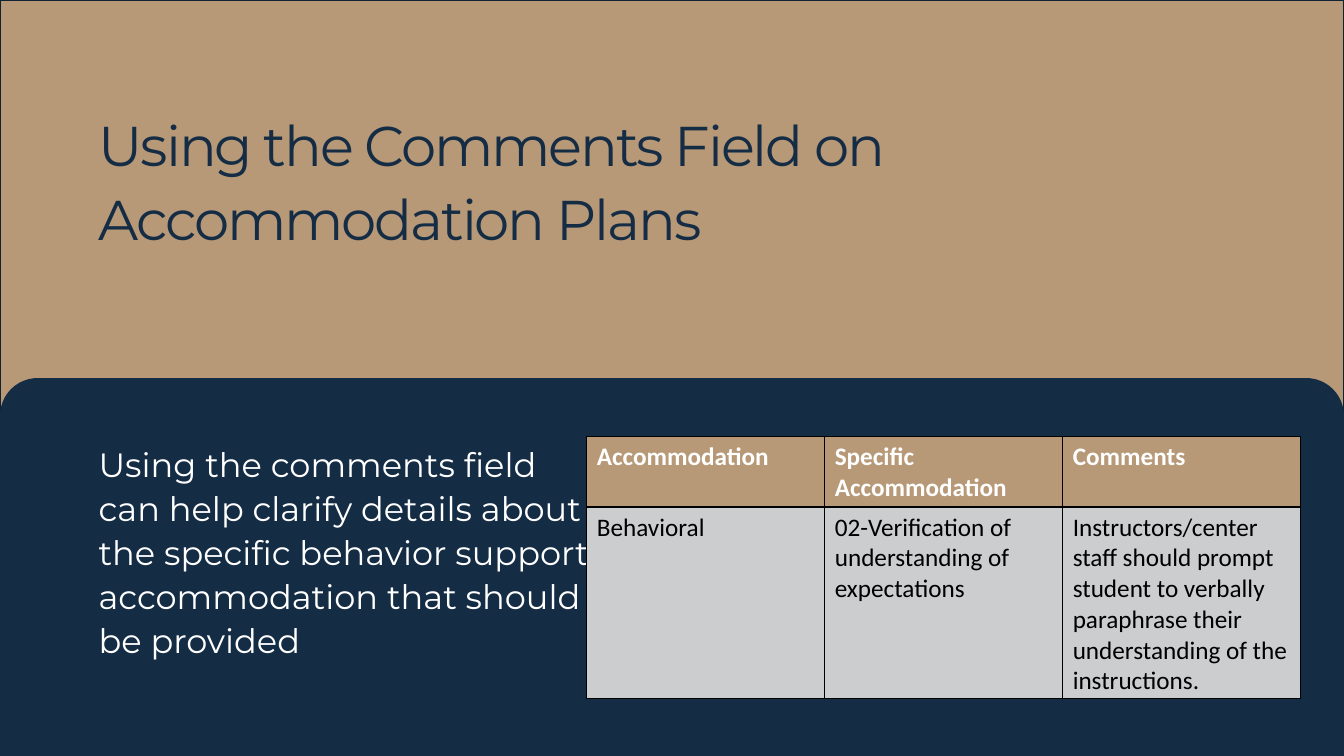
import dataclasses

import pptx
import pptx.dml.color
import pptx.enum.shapes
import pptx.enum.text
import pptx.oxml.ns
import pptx.oxml.xmlchemy
import pptx.util
from lxml import etree

Inches = pptx.util.Inches
Shape = pptx.enum.shapes.MSO_SHAPE

COLORS = {
    "tan": "B79977",
    "navy": "152C45",
    "outline": "102133",
    "gray": "CCCDCF",
    "white": "FFFFFF",
    "black": "000000",
}


@dataclasses.dataclass(frozen=True)
class Panel:
    shape: int
    top: float
    height: float
    fill: str
    line: str | None = None
    corners: tuple[float, ...] = ()


@dataclasses.dataclass(frozen=True)
class TextBlock:
    text: str
    top: float
    width: float
    height: float
    size: int
    color: str
    tracking: float = 0


@dataclasses.dataclass(frozen=True)
class TableRow:
    cells: tuple[str, ...]
    height: float
    fill: str
    color: str
    bold: bool


SLIDE_WIDTH, SLIDE_HEIGHT = 13.33, 7.5
TEXT_LEFT = 0.88
TABLE_LEFT, TABLE_TOP, COLUMN_WIDTH = 5.82, 4.33, 2.36

PANELS = [
    Panel(Shape.RECTANGLE, 0, 4.32, "tan", line="outline"),
    Panel(Shape.ROUND_2_SAME_RECTANGLE, 3.75, 3.75, "navy", corners=(0.1, 0)),
]
TEXT_BLOCKS = [
    TextBlock("Using the Comments Field on Accommodation Plans",
              0.99, 11.51, 1.52, 40, "navy", tracking=-1.5),
    TextBlock("Using the comments field can help clarify details about the specific "
              "behavior support accommodation that should be provided",
              4.32, 5.07, 2.28, 24, "white"),
]
TABLE_ROWS = [
    TableRow(("Accommodation", "Specific Accommodation", "Comments"),
             0.7, "tan", "white", True),
    TableRow(("Behavioral", "02-Verification of understanding of expectations",
              "Instructors/center staff should prompt student to verbally paraphrase "
              "their understanding of the instructions."),
             1.9, "gray", "black", False),
]


def rgb(name: str) -> pptx.dml.color.RGBColor:
    return pptx.dml.color.RGBColor.from_string(COLORS[name])


def style_font(font, name: str, size: int, color: str, bold: bool = False) -> None:
    font.name = name
    font.size = pptx.util.Pt(size)
    font.bold = bold
    font.color.rgb = rgb(color)


def draw_panel(page, panel: Panel) -> None:
    shape = page.shapes.add_shape(panel.shape, 0, Inches(panel.top),
                                  Inches(SLIDE_WIDTH), Inches(panel.height))
    shape.shadow.inherit = False
    shape.fill.solid()
    shape.fill.fore_color.rgb = rgb(panel.fill)
    for index, corner in enumerate(panel.corners):
        shape.adjustments[index] = corner
    if panel.line:
        shape.line.color.rgb = rgb(panel.line)
        shape.line.width = pptx.util.Pt(1)
    else:
        shape.line.fill.background()


def draw_text(page, block: TextBlock) -> None:
    box = page.shapes.add_textbox(Inches(TEXT_LEFT), Inches(block.top),
                                  Inches(block.width), Inches(block.height))
    frame = box.text_frame
    frame.word_wrap = True
    frame.auto_size = pptx.enum.text.MSO_AUTO_SIZE.SHAPE_TO_FIT_TEXT
    frame.text = block.text
    para = frame.paragraphs[0]
    para.line_spacing = 1.09
    para.space_before = pptx.util.Pt(6)
    span = para.runs[0]
    style_font(span.font, "Montserrat", block.size, block.color)
    if block.tracking:
        span._r.get_or_add_rPr().set("spc", str(round(block.tracking * 100)))


def add_borders(cell, color: str, width: float) -> None:
    properties = cell._tc.get_or_add_tcPr()
    qn = pptx.oxml.ns.qn
    # Border lines come before the fill in the cell properties
    for index, side in enumerate(("lnL", "lnR", "lnT", "lnB")):
        line = etree.Element(qn(f"a:{side}"), w=str(pptx.util.Pt(width)))
        fill = etree.SubElement(line, qn("a:solidFill"))
        etree.SubElement(fill, qn("a:srgbClr"), val=COLORS[color])
        properties.insert(index, line)


def draw_table(page, rows: list[TableRow]) -> None:
    column_count = len(rows[0].cells)
    table = page.shapes.add_table(
        len(rows), column_count, Inches(TABLE_LEFT), Inches(TABLE_TOP),
        Inches(COLUMN_WIDTH * column_count), Inches(sum(row.height for row in rows)),
    ).table
    for column in table.columns:
        column.width = Inches(COLUMN_WIDTH)
    for row_index, row in enumerate(rows):
        table.rows[row_index].height = Inches(row.height)
        for column_index, text in enumerate(row.cells):
            cell = table.cell(row_index, column_index)
            cell.text_frame.text = text
            span = cell.text_frame.paragraphs[0].runs[0]
            style_font(span.font, "Calibri", 18, row.color, row.bold)
            cell.fill.solid()
            cell.fill.fore_color.rgb = rgb(row.fill)
            add_borders(cell, "black", 1)


def main() -> None:
    deck = pptx.Presentation()
    deck.slide_width = Inches(SLIDE_WIDTH)
    deck.slide_height = Inches(SLIDE_HEIGHT)
    page = deck.slides.add_slide(deck.slide_layouts[6])

    # Background panels
    for panel in PANELS:
        draw_panel(page, panel)

    # Title and explanation
    for block in TEXT_BLOCKS:
        draw_text(page, block)

    # Example accommodation plan
    draw_table(page, TABLE_ROWS)

    deck.save("out.pptx")


if __name__ == "__main__":
    main()
